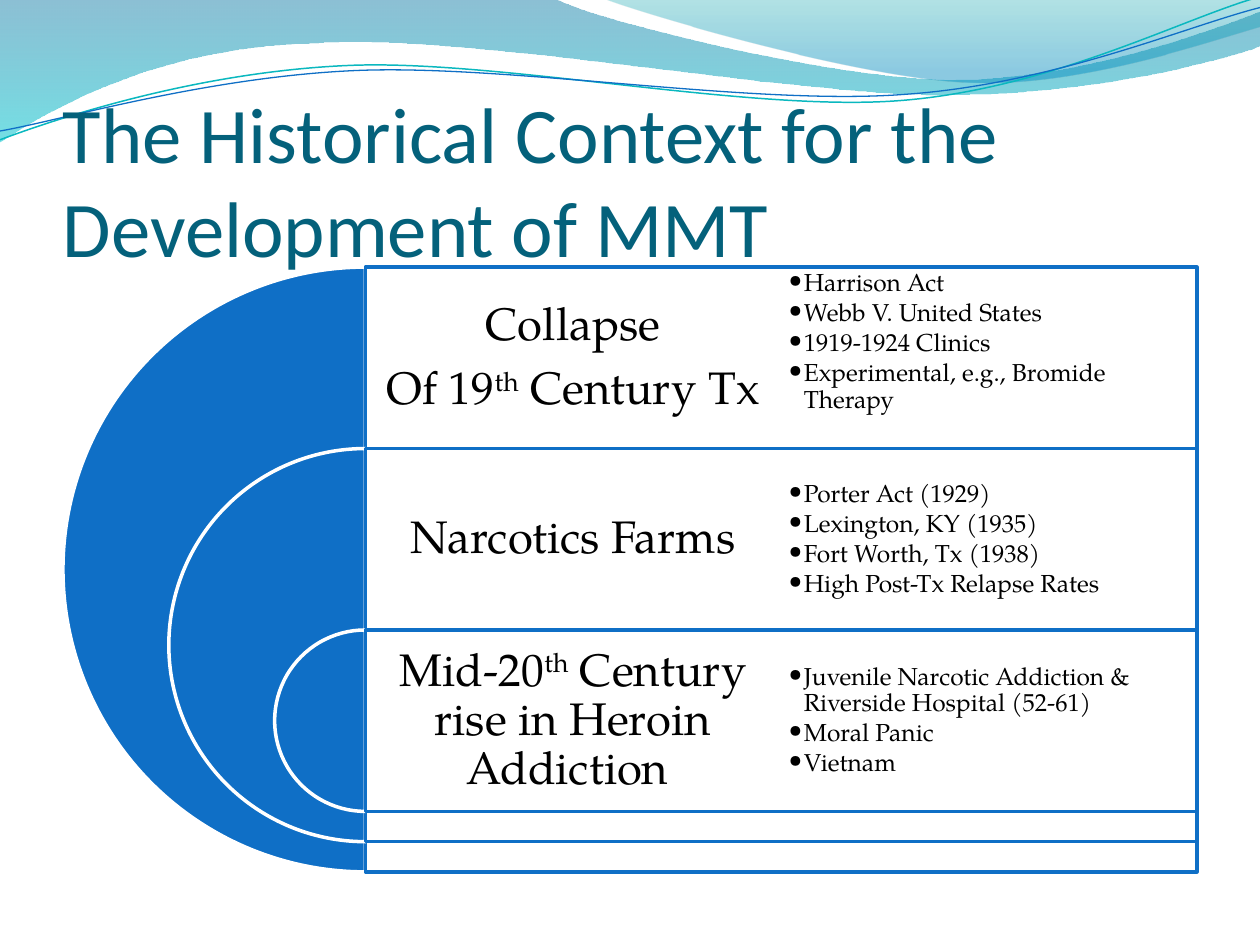
from lxml.etree import SubElement
from pptx import Presentation
from pptx.dml.color import RGBColor
from pptx.enum.shapes import MSO_SHAPE
from pptx.enum.text import MSO_ANCHOR, PP_ALIGN
from pptx.oxml.ns import qn
from pptx.util import Inches, Pt

WHITE = RGBColor(0xFF, 0xFF, 0xFF)
BLACK = RGBColor(0, 0, 0)
BLUE = RGBColor(0x0F, 0x6F, 0xC6)
TEAL = RGBColor(0x0A, 0xB8, 0xBF)
NAVY = RGBColor(0x04, 0x61, 0x7B)
DEEP = RGBColor(0x00, 0x74, 0xA1)
AQUA = RGBColor(0x00, 0xC6, 0xCF)
SEA = RGBColor(0x00, 0xA1, 0xA9)
SKY = RGBColor(0x00, 0x8B, 0xBF)

# Wave outlines: two numbers are a corner, six are a Bezier curve
BAND = [(0, 0), (4.4, -0.01), (4.76, 0.17, 6.64, 0.63, 7.58, 0.63),
        (8.53, 0.63, 9.58, 0.26, 10, 0.09), (10.01, 0.36),
        (9.83, 0.44, 8.7, 0.76, 7.46, 0.75),
        (6.22, 0.75, 3.82, 0.28, 2.57, 0.34),
        (1.29, 0.36, 0.46, 0.83, -0.01, 1.13), (0, 0)]
CREST = [(4.79, -0.01), (5.09, 0.11, 6.82, 0.62, 7.69, 0.65),
         (8.56, 0.69, 9.61, 0.32, 10, 0.21), (10, 0), (4.79, -0.01)]
UPPER = [(0, 1.11), (0.48, 0.93, 1.58, 0.57, 2.77, 0.52),
         (3.95, 0.47, 5.93, 0.89, 7.13, 0.8),
         (8.33, 0.71, 9.38, 0.15, 9.98, -0.02)]
LOWER = [(0, 1.04), (0.47, 0.96, 1.64, 0.61, 2.83, 0.56),
         (4.03, 0.51, 5.97, 0.84, 7.17, 0.75),
         (8.36, 0.67, 9.41, 0.21, 10, 0.06)]

# Each row: heading paragraphs (^ sets off a superscript), bullets, bottom inset
ROWS = [
    (["Collapse", "Of 19^th^ Century Tx"],
     ["Harrison Act", "Webb V. United States", "1919-1924 Clinics",
      "Experimental, e.g., Bromide Therapy"], 0.31),
    (["Narcotics Farms"],
     ["Porter Act (1929)", "Lexington, KY (1935)", "Fort Worth, Tx (1938)",
      "High Post-Tx Relapse Rates"], 0.06),
    (["Mid-20^th^ Century rise in Heroin Addiction "],
     ["Juvenile Narcotic Addiction & Riverside Hospital (52-61)",
      "Moral Panic", "Vietnam"], 0.06),
]
MID, TOP, STEP = 2.9, 2.12, 1.44
WIDTH, HALF = 6.6, 3.3
SIZES = [4.8, 3.12, 1.44]


def fade(color, value):
    """Set the opacity, in percent, of a colour element."""
    SubElement(color, qn("a:alpha"), val=str(value * 1000))


class Deck:
    font = "TeX Gyre Pagella"

    def __init__(self):
        self.file = Presentation()
        self.file.slide_width = Inches(10)
        self.file.slide_height = Inches(7.5)
        self.slide = self.file.slides.add_slide(self.file.slide_layouts[6])
        self.shapes = self.slide.shapes

    def free(self, parts, close):
        """Draw an outline, joining each curve's three points into a Bezier."""
        points = [tuple(map(Inches, part[k:k + 2]))
                  for part in parts for k in range(0, len(part), 2)]
        pen = self.shapes.build_freeform(*points[0])
        pen.add_line_segments(points[1:], close=close)
        shape = pen.convert_to_shape()
        shape.shadow.inherit = False
        lines = list(shape._element.iter(qn("a:lnTo")))
        for part in parts[1:]:
            first = lines.pop(0)
            if len(part) == 6:
                first.tag = qn("a:cubicBezTo")
                for _ in range(2):
                    extra = lines.pop(0)
                    first.append(extra[0])
                    extra.getparent().remove(extra)
        return shape

    def wave(self, parts, stops):
        """Draw a filled wave; stops are (position, colour, opacity)."""
        shape = self.free(parts, True)
        shape.line.fill.background()
        shape.fill.gradient()
        shape.fill.gradient_angle = 270
        for stop, (place, color, alpha) in zip(shape.fill.gradient_stops, stops):
            stop.position = place
            stop.color.rgb = color
            fade(stop._gs.find(qn("a:srgbClr")), alpha)

    def curve(self, parts, color, width):
        shape = self.free(parts, False)
        shape.fill.background()
        shape.line.color.rgb = color
        shape.line.width = Pt(width)

    def shape(self, kind, box, fill, line, alpha=100):
        shape = self.shapes.add_shape(kind, *map(Inches, box))
        shape.shadow.inherit = False
        shape.fill.solid()
        shape.fill.fore_color.rgb = fill
        if alpha < 100:
            fade(shape._element.spPr.find(qn("a:solidFill"))[0], alpha)
        shape.line.color.rgb = line
        shape.line.width = Pt(2)
        return shape

    def half(self, box):
        """Draw the left half of a disc."""
        pie = self.shape(MSO_SHAPE.PIE, box, BLUE, WHITE)
        pie.adjustments[0] = 54
        pie.adjustments[1] = 162

    def text(self, box, lines, size, font=None, color=BLACK, inset=(0, 0, 0, 0),
             anchor=MSO_ANCHOR.MIDDLE, align=PP_ALIGN.LEFT, space=1, after=0,
             bullet=False):
        frame = self.shapes.add_textbox(*map(Inches, box)).text_frame
        frame.word_wrap = True
        frame.vertical_anchor = anchor
        (frame.margin_left, frame.margin_top,
         frame.margin_right, frame.margin_bottom) = map(Inches, inset)
        for i, line in enumerate(lines):
            para = frame.add_paragraph() if i else frame.paragraphs[0]
            para.alignment = align
            para.line_spacing = space
            para.space_after = Pt(after)
            if bullet:
                props = para._p.get_or_add_pPr()
                props.set("marL", str(Inches(0.12)))
                props.set("indent", str(Inches(-0.12)))
                SubElement(props, qn("a:buFont"), typeface=font or self.font)
                SubElement(props, qn("a:buChar"), char="•")
            for j, part in enumerate(line.split("^")):
                run = para.add_run()
                run.text = part
                run.font.size = Pt(size)
                run.font.name = font or self.font
                run.font.color.rgb = color
                if j % 2:
                    run._r.get_or_add_rPr().set("baseline", "30000")


def main():
    deck = Deck()
    deck.wave(BAND, [(0, DEEP, 45), (1, AQUA, 55)])
    deck.wave(CREST, [(0, SEA, 30), (0.8, SKY, 45)])
    deck.curve(UPPER, TEAL, 0.85)
    deck.curve(LOWER, BLUE, 0.75)
    deck.text((0.5, 0.77, 9, 1.4),
              ["The Historical Context for the Development of MMT"], 45,
              font="Calibri", color=NAVY, inset=(0, 0.05, 0, 0),
              anchor=MSO_ANCHOR.BOTTOM)
    for i, ((head, items, foot), size) in enumerate(zip(ROWS, SIZES)):
        top = TOP + i * STEP
        deck.half((MID - size / 2, top, size, size))
        deck.shape(MSO_SHAPE.RECTANGLE, (MID, top, WIDTH, size),
                   WHITE, BLUE, alpha=90)
        deck.text((MID, top, HALF, STEP), head, 26, inset=[0.11] * 4,
                  align=PP_ALIGN.CENTER, space=0.9, after=9)
        deck.text((MID + HALF, top, HALF, STEP), items, 14,
                  inset=(0.06, 0.06, 0.06, foot), space=0.9, after=2,
                  bullet=True)
    deck.file.save("out.pptx")


if __name__ == "__main__":
    main()
